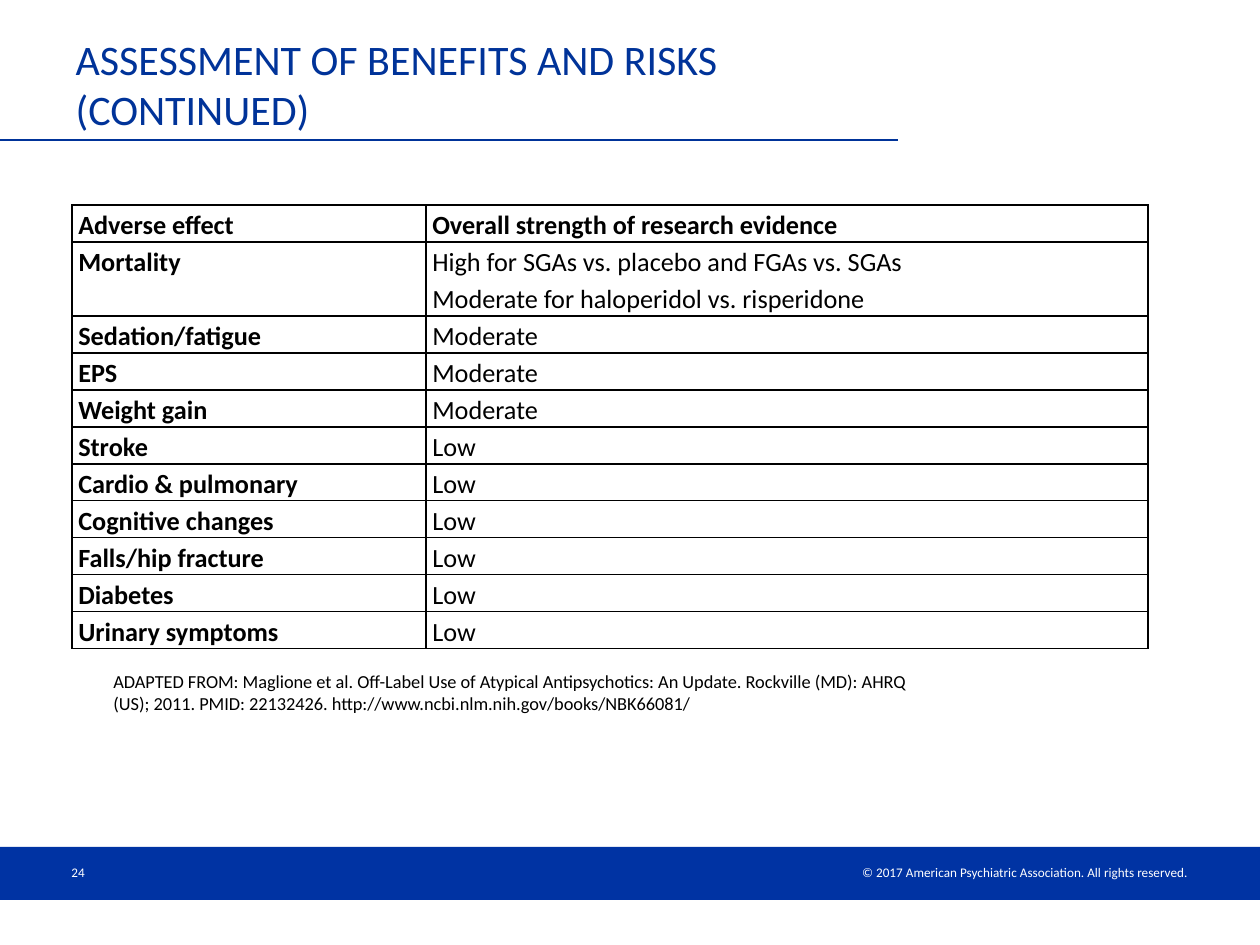
from lxml import etree
from pptx import Presentation, util as u
from pptx.dml.color import RGBColor
from pptx.enum import shapes, text
from pptx.oxml.ns import qn

PX = 914400 / 126
FONT = "Calibri"
TITLE_BLUE, BAND_BLUE, WHITE, BLACK = "003399", "0033A3", "FFFFFF", "000000"
ROW_HEIGHT = 37
COLUMN_WIDTHS = (354, 722)
EVIDENCE = [
    ("Adverse effect", "Overall strength of research evidence"),
    ("Mortality", "High for SGAs vs. placebo and FGAs vs. SGAs\n"
                  "Moderate for haloperidol vs. risperidone"),
    ("Sedation/fatigue", "Moderate"),
    ("EPS", "Moderate"),
    ("Weight gain", "Moderate"),
    ("Stroke", "Low"),
    ("Cardio & pulmonary", "Low"),
    ("Cognitive changes", "Low"),
    ("Falls/hip fracture", "Low"),
    ("Diabetes", "Low"),
    ("Urinary symptoms", "Low"),
]
CITATION = ("ADAPTED FROM: Maglione et al. Off-Label Use of Atypical Antipsychotics: "
            "An Update. Rockville (MD): AHRQ (US); 2011. PMID: 22132426. "
            "http://www.ncbi.nlm.nih.gov/books/NBK66081/")
COPYRIGHT = "© 2017 American Psychiatric Association. All rights reserved. "


def px(*lengths):
    """Turn pixel lengths into a list of EMU."""
    return [u.Emu(round(length * PX)) for length in lengths]


def color(hex_code):
    """Turn a hex string into a colour."""
    return RGBColor.from_string(hex_code)


def write(frame, words, size, hex_code, align=text.PP_ALIGN.LEFT, bold=False, spacing=None):
    """Fill a text frame with evenly formatted paragraphs."""
    frame.text = words
    for paragraph in frame.paragraphs:
        paragraph.alignment = align
        paragraph.line_spacing = spacing
        font = paragraph.font
        font.name, font.size, font.bold = FONT, u.Pt(size), bold
        font.color.rgb = color(hex_code)


def add_title(slide, words, box):
    """Place and format the title placeholder."""
    title = slide.shapes.title
    title.left, title.top, title.width, title.height = px(*box)
    write(title.text_frame, words, 24, TITLE_BLUE)
    title.text_frame.vertical_anchor = text.MSO_ANCHOR.MIDDLE
    title.text_frame.auto_size = text.MSO_AUTO_SIZE.NONE


def add_label(slide, words, box, size, hex_code,
              align=text.PP_ALIGN.LEFT, anchor=text.MSO_ANCHOR.MIDDLE):
    """Add a wrapped text box."""
    frame = slide.shapes.add_textbox(*px(*box)).text_frame
    frame.word_wrap = True
    frame.vertical_anchor = anchor
    write(frame, words, size, hex_code, align)


def add_band(slide, box):
    """Add the plain footer band."""
    band = slide.shapes.add_shape(shapes.MSO_SHAPE.RECTANGLE, *px(*box))
    band.shadow.inherit = False
    band.fill.solid()
    band.fill.fore_color.rgb = color(BAND_BLUE)
    band.line.fill.background()


def add_rule(slide, ends):
    """Add the straight rule under the title."""
    rule = slide.shapes.add_connector(shapes.MSO_CONNECTOR.STRAIGHT, *px(*ends))
    rule.line.color.rgb = color(TITLE_BLUE)
    rule.line.width = u.Pt(0.75)
    etree.SubElement(rule._element.spPr, qn("a:effectLst"))


def add_borders(cell):
    """Draw a thin black line on every side of a cell."""
    properties = cell._tc.get_or_add_tcPr()
    for position, side in enumerate(("a:lnL", "a:lnR", "a:lnT", "a:lnB")):
        border = etree.Element(qn(side), w=str(u.Pt(1)))
        fill = etree.SubElement(border, qn("a:solidFill"))
        etree.SubElement(fill, qn("a:srgbClr"), val=BLACK)
        properties.insert(position, border)


def fill_cell(cell, words, bold):
    """Write and format one table cell."""
    cell.margin_left = cell.margin_right = u.Inches(0.05)
    cell.margin_top = cell.margin_bottom = 0
    write(cell.text_frame, words, 15, BLACK, bold=bold, spacing=1.15)
    cell.fill.background()
    add_borders(cell)


def add_evidence_table(slide, left, top):
    """Add the table of adverse effects and evidence strength."""
    heights = [ROW_HEIGHT * (1 + strength.count("\n")) for _, strength in EVIDENCE]
    box = px(left, top, sum(COLUMN_WIDTHS), sum(heights))
    table = slide.shapes.add_table(len(EVIDENCE), len(COLUMN_WIDTHS), *box).table
    table.horz_banding = False
    for column, width in zip(table.columns, px(*COLUMN_WIDTHS)):
        column.width = width
    for row, height in zip(table.rows, px(*heights)):
        row.height = height
    for r, entries in enumerate(EVIDENCE):
        for c, words in enumerate(entries):
            fill_cell(table.cell(r, c), words, bold=r == 0 or c == 0)


def main():
    """Build and save the slide."""
    deck = Presentation()
    deck.slide_width, deck.slide_height = px(1260, 945)
    slide = deck.slides.add_slide(deck.slide_layouts[5])
    add_band(slide, (0, 847, 1260, 53))
    add_rule(slide, (0, 140, 898, 140))
    add_label(slide, COPYRIGHT, (653, 858, 550, 29), 7.5, WHITE, text.PP_ALIGN.RIGHT)
    add_label(slide, "24", (59, 847, 294, 50), 7.5, WHITE)
    add_title(slide, "ASSESSMENT OF BENEFITS AND RISKS (CONTINUED)", (63, 43, 835, 81))
    add_evidence_table(slide, 72, 205)
    add_label(slide, CITATION, (101, 664, 839, 57), 10.5, BLACK, anchor=text.MSO_ANCHOR.TOP)
    deck.save("out.pptx")


if __name__ == "__main__":
    main()
